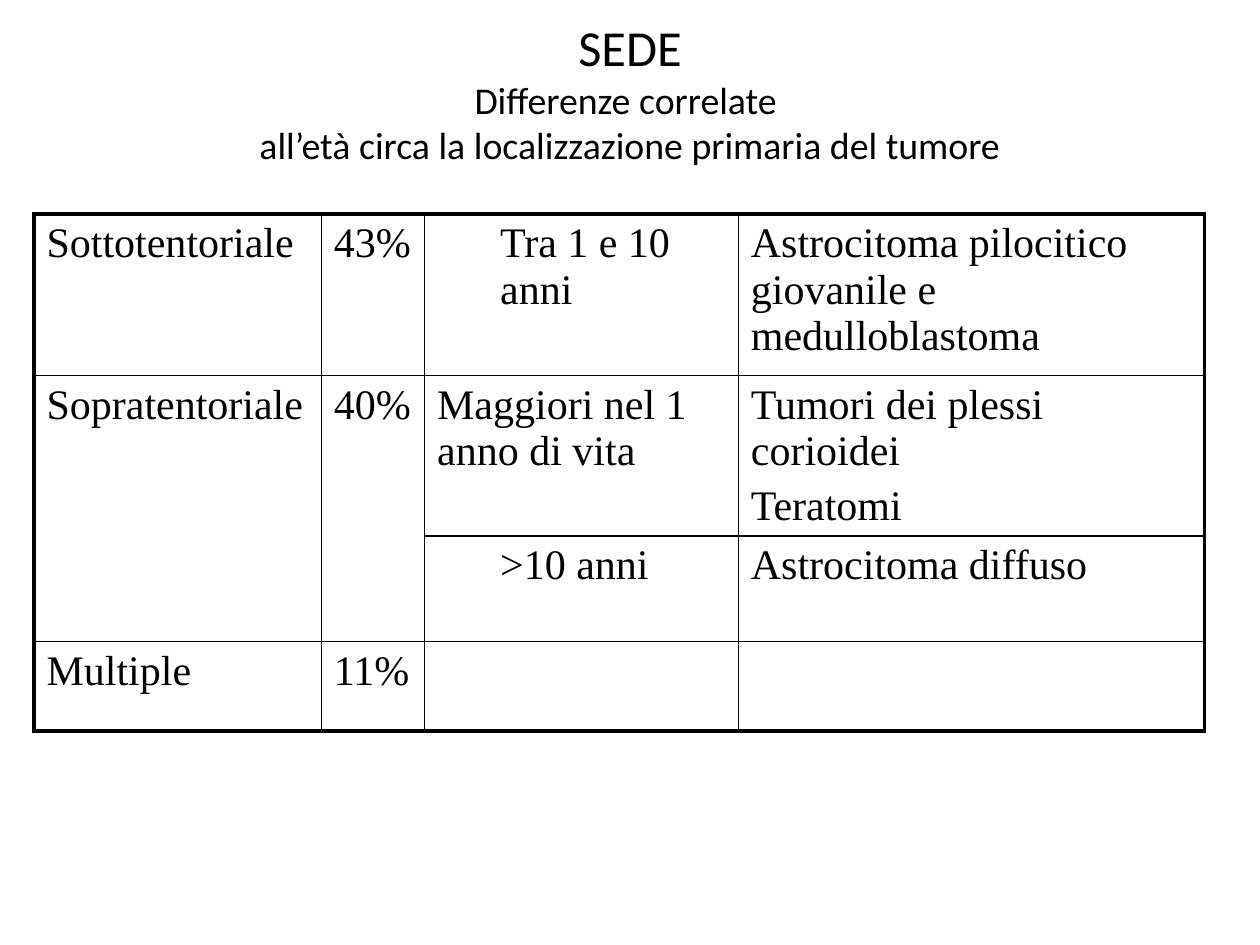
from dataclasses import dataclass

from lxml import etree
from pptx import Presentation
from pptx.dml.color import RGBColor
from pptx.enum.text import MSO_ANCHOR, MSO_AUTO_SIZE, PP_ALIGN
from pptx.oxml.ns import qn
from pptx.util import Inches, Pt

MIDDLE, CENTER, NO_FIT = MSO_ANCHOR.MIDDLE, PP_ALIGN.CENTER, MSO_AUTO_SIZE.NONE
TITLE_ONLY = 5
COLORS = {"ink": "000000"}
PAGE_WIDTH, PAGE_HEIGHT = 10, 7.5
TITLE_FONT, TABLE_FONT = "Calibri", "Times New Roman"
TABLE_LEFT, TABLE_TOP = 0.27, 1.7
COLUMN_WIDTHS = (2.28, 0.82, 2.49, 3.7)
ROW_HEIGHTS = (1.28, 1.27, 0.84, 0.71)
THIN, THICK = 1, 2.25


@dataclass(frozen=True)
class Entry:
    row: int
    column: int
    lines: tuple[str, ...]
    indent: float = 0
    rows: int = 1


ENTRIES = (
    Entry(0, 0, ("Sottotentoriale",)),
    Entry(0, 1, ("43%",)),
    Entry(0, 2, ("Tra 1 e 10 anni",), indent=0.5),
    Entry(0, 3, ("Astrocitoma pilocitico giovanile e medulloblastoma",)),
    Entry(1, 0, ("Sopratentoriale",), rows=2),
    Entry(1, 1, ("40%",), rows=2),
    Entry(1, 2, ("Maggiori nel 1 anno di vita",)),
    Entry(1, 3, ("Tumori dei plessi corioidei", "Teratomi")),
    Entry(2, 2, (">10 anni",), indent=0.5),
    Entry(2, 3, ("Astrocitoma diffuso",)),
    Entry(3, 0, ("Multiple",)),
    Entry(3, 1, ("11%",)),
)


def style_font(font, name: str, size: float) -> None:
    font.name, font.size = name, Pt(size)
    font.color.rgb = RGBColor.from_string(COLORS["ink"])


def add_title(page) -> None:
    title = page.shapes.title
    title.left, title.top = Inches(0.05 * PAGE_WIDTH), Inches(0.04 * PAGE_HEIGHT)
    title.width, title.height = Inches(0.9 * PAGE_WIDTH), Inches(0.85)
    frame = title.text_frame
    frame.word_wrap, frame.auto_size = True, NO_FIT
    frame.vertical_anchor = MIDDLE
    para = frame.paragraphs[0]
    para.alignment = CENTER
    lines = (
        ("SEDE", 28.8),
        ("Differenze correlate ", 21.6),
        ("all’età circa la localizzazione primaria del tumore", 21.6),
    )
    for index, (text, size) in enumerate(lines):
        if index:
            para.add_line_break()
        span = para.add_run()
        span.text = text
        style_font(span.font, TITLE_FONT, size)


def set_borders(cell, widths: dict[str, float]) -> None:
    """Draw the cell's sides; they must precede the fill in the cell's XML."""
    properties = cell._tc.get_or_add_tcPr()
    for side, width in widths.items():
        line = etree.SubElement(properties, qn(f"a:{side}"), w=str(Pt(width)))
        fill = etree.SubElement(line, qn("a:solidFill"))
        etree.SubElement(fill, qn("a:srgbClr"), val=COLORS["ink"])
    cell.fill.background()


def fill_cell(table, entry: Entry) -> None:
    cell = table.cell(entry.row, entry.column)
    if entry.rows > 1:
        cell.merge(table.cell(entry.row + entry.rows - 1, entry.column))
    frame = cell.text_frame
    for index, line in enumerate(entry.lines):
        para = frame.add_paragraph() if index else frame.paragraphs[0]
        para.text = line
        para.space_before = Pt(4.8)
        style_font(para.font, TABLE_FONT, 24)
        if entry.indent:
            para.level = 1
            para._p.get_or_add_pPr().set("marL", str(Inches(entry.indent)))


def add_site_table(page) -> None:
    row_count, column_count = len(ROW_HEIGHTS), len(COLUMN_WIDTHS)
    table = page.shapes.add_table(
        row_count, column_count, Inches(TABLE_LEFT), Inches(TABLE_TOP),
        Inches(sum(COLUMN_WIDTHS)), Inches(sum(ROW_HEIGHTS)),
    ).table
    table.first_row = table.horz_banding = False
    for column, width in zip(table.columns, COLUMN_WIDTHS):
        column.width = Inches(width)
    for row, height in zip(table.rows, ROW_HEIGHTS):
        row.height = Inches(height)
    for row in range(row_count):
        for column in range(column_count):
            outer = {
                "lnL": column == 0,
                "lnR": column == column_count - 1,
                "lnT": row == 0,
                "lnB": row == row_count - 1,
            }
            widths = {side: THICK if edge else THIN for side, edge in outer.items()}
            set_borders(table.cell(row, column), widths)
    for entry in ENTRIES:
        fill_cell(table, entry)


def main() -> None:
    deck = Presentation()
    deck.slide_width, deck.slide_height = Inches(PAGE_WIDTH), Inches(PAGE_HEIGHT)
    page = deck.slides.add_slide(deck.slide_layouts[TITLE_ONLY])
    add_title(page)
    add_site_table(page)
    deck.save("out.pptx")


if __name__ == "__main__":
    main()
